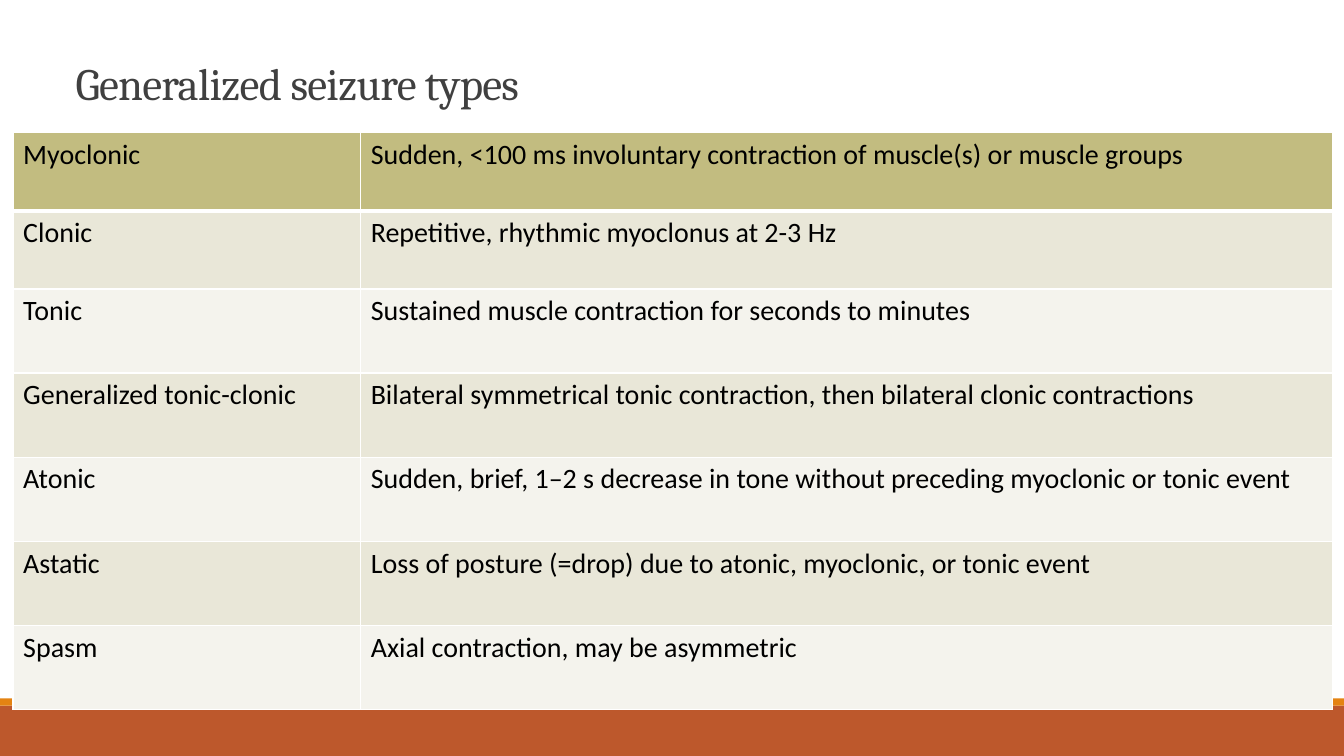
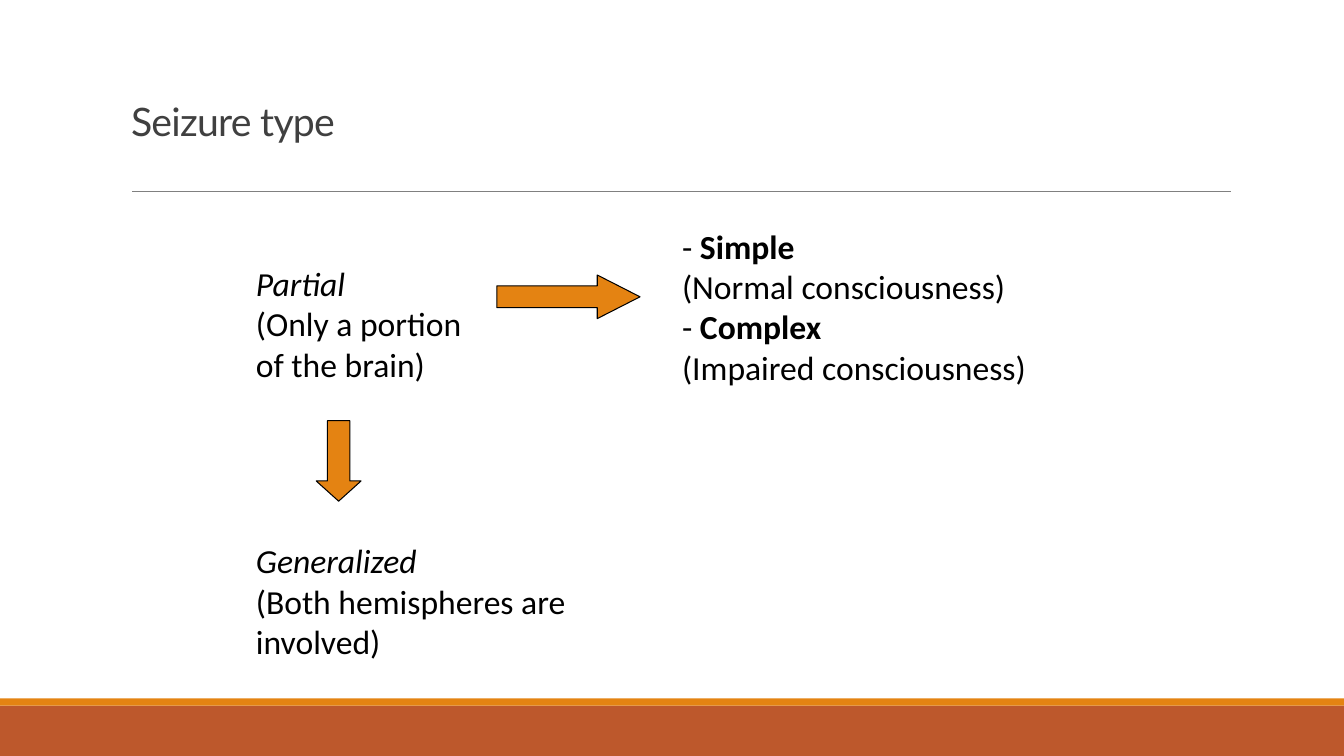
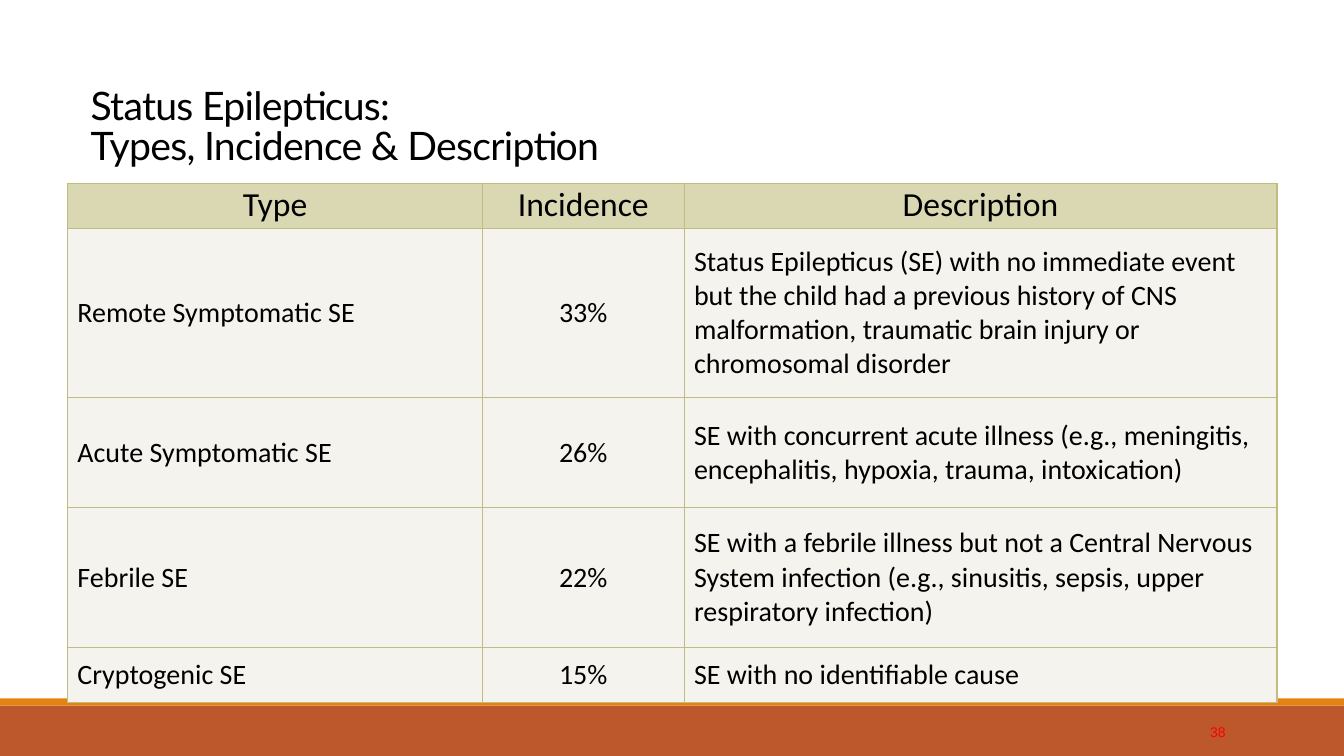
from lxml import etree
from pptx import Presentation
from pptx.dml.color import RGBColor
from pptx.enum import shapes, text
from pptx.oxml import ns
from pptx.util import Cm, Pt

RUST = RGBColor(0xBD, 0x58, 0x2C)
ORANGE = RGBColor(0xE4, 0x83, 0x12)
GREY = RGBColor(0x80, 0x80, 0x80)
CHARCOAL = RGBColor(0x40, 0x40, 0x40)
BLACK = RGBColor(0, 0, 0)
WHITE = RGBColor(0xFF, 0xFF, 0xFF)
RED = RGBColor(0xFF, 0, 0)
OLIVE = RGBColor(0xC2, 0xBC, 0x80)
OLIVE_LIGHT = RGBColor(0xDA, 0xD7, 0xB3)
SAND = RGBColor(0xE9, 0xE7, 0xD8)
IVORY = RGBColor(0xF4, 0xF3, 0xED)

BODY_FONT = "Calibri"
SLIDE_WIDTH, SLIDE_HEIGHT = 33.87, 19.05
LEFT, CENTER = text.PP_ALIGN.LEFT, text.PP_ALIGN.CENTER
TOP, MIDDLE, BOTTOM = text.MSO_ANCHOR.TOP, text.MSO_ANCHOR.MIDDLE, text.MSO_ANCHOR.BOTTOM

SEIZURE_TYPES = [
    ("Myoclonic", "Sudden, <100 ms involuntary contraction of muscle(s) or muscle groups"),
    ("Clonic", "Repetitive, rhythmic myoclonus at 2-3 Hz"),
    ("Tonic", "Sustained muscle contraction for seconds to minutes"),
    ("Generalized tonic-clonic",
     "Bilateral symmetrical tonic contraction, then bilateral clonic contractions"),
    ("Atonic",
     "Sudden, brief, 1–2 s decrease in tone without preceding myoclonic or tonic event"),
    ("Astatic", "Loss of posture (=drop) due to atonic, myoclonic, or tonic event"),
    ("Spasm", "Axial contraction, may be asymmetric"),
]

STATUS_TYPES = [
    ("Type", "Incidence", "Description"),
    ("Remote Symptomatic SE", "33%",
     "Status Epilepticus (SE) with no immediate event but the child had a previous history "
     "of CNS malformation, traumatic brain injury or chromosomal disorder"),
    ("Acute Symptomatic SE", "26%",
     "SE with concurrent acute illness (e.g., meningitis, encephalitis, hypoxia, trauma, "
     "intoxication)"),
    ("Febrile SE", "22%",
     "SE with a febrile illness but not a Central Nervous System infection (e.g., sinusitis, "
     "sepsis, upper respiratory infection)"),
    ("Cryptogenic SE", "15%", "SE with no identifiable cause"),
]


def style_font(font, size, color=BLACK, name=BODY_FONT):
    font.size, font.name = Pt(size), name
    font.color.rgb = color


def add_filled(slide, kind, box, fill, outline=None):
    shape = slide.shapes.add_shape(kind, *map(Cm, box))
    shape.shadow.inherit = False
    shape.fill.solid()
    shape.fill.fore_color.rgb = fill
    if outline is None:
        shape.line.fill.background()
    else:
        shape.line.color.rgb = outline
        shape.line.width = Pt(0.75)
    return shape


def add_layout_decor(slide):
    rectangle = shapes.MSO_SHAPE.RECTANGLE
    footer = add_filled(slide, rectangle, (0, 17.78, SLIDE_WIDTH, 1.27), RUST)
    stripe = add_filled(slide, rectangle, (0, 17.6, SLIDE_WIDTH, 0.18), ORANGE)
    rule = slide.shapes.add_connector(
        shapes.MSO_CONNECTOR.STRAIGHT, Cm(3.33), Cm(4.83), Cm(31.01), Cm(4.83))
    rule.line.color.rgb = GREY
    rule.line.width = Pt(0.5)
    etree.SubElement(rule.element.spPr, ns.qn("a:effectLst"))
    for part in (footer, stripe, rule):
        slide.slide_layout.shapes.element.append(part.element)


def set_title(slide, wording, box, size, name, color=CHARCOAL, anchor=BOTTOM):
    title = slide.shapes.title
    title.left, title.top, title.width, title.height = map(Cm, box)
    frame = title.text_frame
    frame.auto_size = text.MSO_AUTO_SIZE.NONE
    frame.vertical_anchor = anchor
    heading = frame.paragraphs[0]
    heading.text = wording
    heading.alignment = LEFT
    heading.line_spacing = 0.85
    for run in heading.runs:
        style_font(run.font, size, color, name)
        run.font._element.set("spc", "-50")


def set_borders(cell, color, top=1, bottom=1):
    properties = cell._tc.get_or_add_tcPr()
    for side, width in (("L", 1), ("R", 1), ("T", top), ("B", bottom)):
        border = etree.SubElement(properties, ns.qn(f"a:ln{side}"), w=str(Pt(width)))
        fill = etree.SubElement(border, ns.qn("a:solidFill"))
        etree.SubElement(fill, ns.qn("a:srgbClr"), val=str(color))


def add_grid(slide, left, top, widths, heights, rows):
    frame = slide.shapes.add_table(
        len(rows), len(widths), Cm(left), Cm(top), Cm(sum(widths)), Cm(sum(heights)))
    table = frame.table
    table.first_row = table.horz_banding = False
    for column, width in zip(table.columns, widths):
        column.width = Cm(width)
    for row, height in zip(table.rows, heights):
        row.height = Cm(height)
    for r, wordings in enumerate(rows):
        for c, wording in enumerate(wordings):
            yield r, c, table.cell(r, c), wording


def fill_cell(cell, wording, fill, size=20, align=LEFT, anchor=TOP):
    cell.fill.solid()
    cell.fill.fore_color.rgb = fill
    cell.vertical_anchor = anchor
    entry = cell.text_frame.paragraphs[0]
    entry.text = wording
    entry.alignment = align
    for run in entry.runs:
        style_font(run.font, size)


def add_seizure_table(slide, left, top):
    heights = [1.97] * 2 + [2.12] * 5
    for r, c, cell, wording in add_grid(slide, left, top, (8.76, 24.49), heights, SEIZURE_TYPES):
        set_borders(cell, WHITE, top=3 if r == 1 else 1, bottom=3 if r == 0 else 1)
        fill = OLIVE if r == 0 else (IVORY, SAND)[r % 2]
        fill_cell(cell, wording, fill)


def add_status_table(slide, left, top):
    widths, heights = (10.46, 5.08, 14.94), (1.13, 4.27, 2.78, 3.52, 1.38)
    for r, c, cell, wording in add_grid(slide, left, top, widths, heights, STATUS_TYPES):
        set_borders(cell, OLIVE)
        if r == 0:
            cell.margin_left = cell.margin_right = Cm(0.18)
            cell.margin_top, cell.margin_bottom = Cm(0.03), Cm(0)
            fill_cell(cell, wording, OLIVE_LIGHT, 24, CENTER)
        else:
            cell.margin_left = cell.margin_right = Cm(0.25)
            cell.margin_top = cell.margin_bottom = Cm(0.25)
            fill_cell(cell, wording, IVORY, align=CENTER if c == 1 else LEFT, anchor=MIDDLE)


def add_label(slide, box, lines):
    frame = slide.shapes.add_textbox(*map(Cm, box)).text_frame
    frame.word_wrap = False
    frame.auto_size = text.MSO_AUTO_SIZE.SHAPE_TO_FIT_TEXT
    for i, pieces in enumerate(lines):
        line = frame.add_paragraph() if i else frame.paragraphs[0]
        for wording, emphasis in pieces:
            run = line.add_run()
            run.text = wording
            style_font(run.font, 24)
            run.font.bold = emphasis == "bold"
            run.font.italic = emphasis == "italic"


def add_seizure_flow(slide, left, top):
    add_label(slide, (left, top + 0.94, 5.79, 3.33), [
        [("Partial", "italic")],
        [("(Only a portion", "")],
        [("of the brain)", "")],
    ])
    add_label(slide, (left + 10.74, top, 9.22, 4.37), [
        [("- ", ""), ("Simple", "bold")],
        [("(Normal consciousness)", "")],
        [("- ", ""), ("Complex", "bold")],
        [("(Impaired consciousness)", "")],
    ])
    add_label(slide, (left, top + 7.93, 8.38, 3.33), [
        [("Generalized", "italic")],
        [("(Both hemispheres are", "")],
        [("involved)", "")],
    ])
    arrows = [
        (shapes.MSO_SHAPE.RIGHT_ARROW, (left + 6.32, top + 1.37, 3.61, 1.1), 0.98),
        (shapes.MSO_SHAPE.DOWN_ARROW, (left + 1.77, top + 5.04, 1.13, 2.03), 0.45),
    ]
    for kind, box, head_length in arrows:
        arrow = add_filled(slide, kind, box, ORANGE, BLACK)
        arrow.adjustments[0] = 0.5
        arrow.adjustments[1] = head_length


def add_page_number(slide, number, left, top):
    frame = slide.shapes.add_textbox(Cm(left), Cm(top), Cm(3.63), Cm(1.02)).text_frame
    frame.word_wrap = True
    frame.vertical_anchor = MIDDLE
    page = frame.paragraphs[0]
    page.text = number
    page.alignment = text.PP_ALIGN.RIGHT
    style_font(page.runs[0].font, 10, RED, "Arial")


def main():
    deck = Presentation()
    deck.slide_width, deck.slide_height = Cm(SLIDE_WIDTH), Cm(SLIDE_HEIGHT)
    title_only = deck.slide_layouts[5]
    generalized, seizure, status = [deck.slides.add_slide(title_only) for _ in range(3)]
    add_layout_decor(generalized)

    set_title(generalized, "Generalized seizure types", (1.65, 1.02, 27.94, 1.88), 32, "Cambria")
    add_seizure_table(generalized, 0.33, 3.34)

    set_title(seizure, "Seizure type", (3.05, 0.79, 27.94, 2.97), 28, "Lato")
    add_seizure_flow(seizure, 6.2, 5.56)

    set_title(status, "Status Epilepticus:\vTypes, Incidence & Description",
              (2.03, 1.65, 24.13, 3.18), 28, "Lato", BLACK, MIDDLE)
    add_status_table(status, 1.7, 4.62)
    add_page_number(status, "38", 27.51, 17.93)

    deck.save("out.pptx")


if __name__ == "__main__":
    main()
